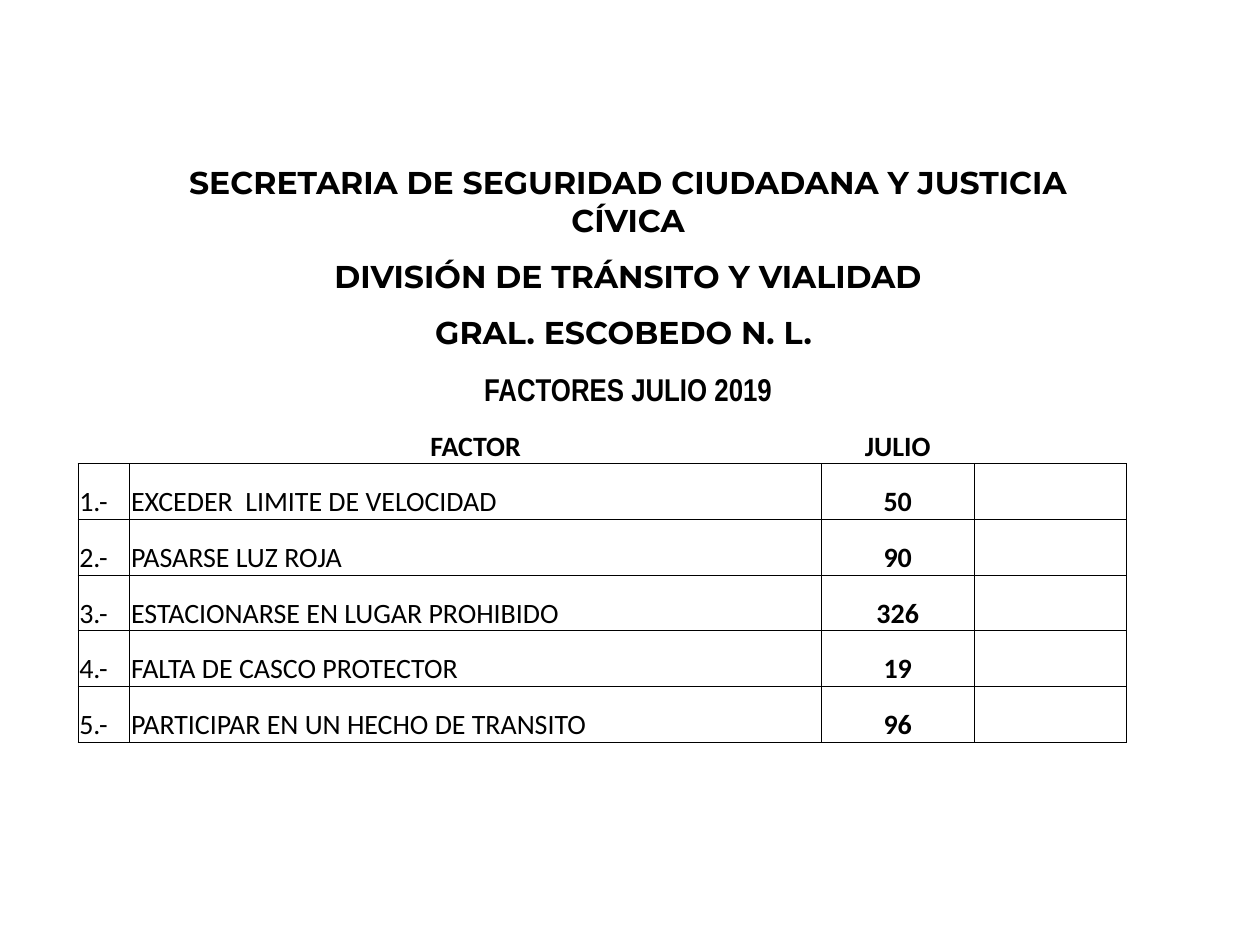
from lxml import etree
from pptx import Presentation
from pptx.dml.color import RGBColor
from pptx.enum.text import MSO_ANCHOR, PP_ALIGN
from pptx.oxml.ns import qn
from pptx.util import Inches, Pt

BOTTOM = MSO_ANCHOR.BOTTOM
LEFT, CENTER = PP_ALIGN.LEFT, PP_ALIGN.CENTER
BLACK = "000000"
NO_STYLE = "{2D5ABB26-0587-4C30-8999-92F81FD0307C}"

HEADINGS = [
    ("SECRETARIA DE SEGURIDAD CIUDADANA Y JUSTICIA CÍVICA", "Montserrat"),
    ("DIVISIÓN DE TRÁNSITO Y VIALIDAD", "Montserrat"),
    ("GRAL. ESCOBEDO N. L. ", "Montserrat"),
    ("FACTORES JULIO 2019", "Arial Narrow"),
]
FACTORS = [
    ("EXCEDER  LIMITE DE VELOCIDAD", 50),
    ("PASARSE LUZ ROJA", 90),
    ("ESTACIONARSE EN LUGAR PROHIBIDO", 326),
    ("FALTA DE CASCO PROTECTOR", 19),
    ("PARTICIPAR EN UN HECHO DE TRANSITO", 96),
]
COL_WIDTHS = [0.41, 5.49, 1.21, 1.21]
HEADER_ROW = len(HEADINGS)
ROWS = HEADER_ROW + 1 + len(FACTORS)


def write(cell, text, size=16, font="Calibri", bold=True, align=CENTER):
    cell.text_frame.text = text
    p = cell.text_frame.paragraphs[0]
    p.alignment = align
    r = p.runs[0]
    r.font.size, r.font.name, r.font.bold = Pt(size), font, bold
    r.font.color.rgb = RGBColor.from_string(BLACK)


def set_borders(cell, visible):
    """Draw thin lines on the sides named in visible (L, R, T, B), none elsewhere."""
    tcPr = cell._tc.get_or_add_tcPr()
    for i, side in enumerate("LRTB"):
        ln = etree.Element(qn("a:ln" + side), w=str(Pt(0.5)))
        if side in visible:
            fill = etree.SubElement(ln, qn("a:solidFill"))
            etree.SubElement(fill, qn("a:srgbClr"), val=BLACK)
        else:
            etree.SubElement(ln, qn("a:noFill"))
        tcPr.insert(i, ln)


prs = Presentation()
prs.slide_width, prs.slide_height = Inches(10), Inches(7.5)
s = prs.slides.add_slide(prs.slide_layouts[6])

row_height = int(prs.slide_height * 0.059)
frame = s.shapes.add_table(ROWS, len(COL_WIDTHS), Inches(0.62), Inches(1.29),
                           Inches(sum(COL_WIDTHS)), row_height * ROWS)
table = frame.table
table.first_row = table.horz_banding = False
table._tbl.tblPr.find(qn("a:tableStyleId")).text = NO_STYLE
for column, width in zip(table.columns, COL_WIDTHS):
    column.width = Inches(width)

for i, row in enumerate(table.rows):
    row.height = row_height
    for cell in row.cells:
        cell.vertical_anchor = BOTTOM
        cell.margin_left = cell.margin_right = cell.margin_top = Inches(0.01)
        cell.margin_bottom = 0
        cell.fill.background()
        set_borders(cell, "LRTB" if i > HEADER_ROW else "B" if i == HEADER_ROW else "")

for i, (heading, font) in enumerate(HEADINGS):
    table.cell(i, 1).merge(table.cell(i, 3))
    write(table.cell(i, 1), heading, size=18, font=font)

write(table.cell(HEADER_ROW, 1), "FACTOR")
write(table.cell(HEADER_ROW, 2), "JULIO")

for n, (factor, count) in enumerate(FACTORS, 1):
    i = HEADER_ROW + n
    write(table.cell(i, 0), f"{n}.-", bold=False, align=LEFT)
    write(table.cell(i, 1), factor, bold=False, align=LEFT)
    write(table.cell(i, 2), str(count))

prs.save("out.pptx")
